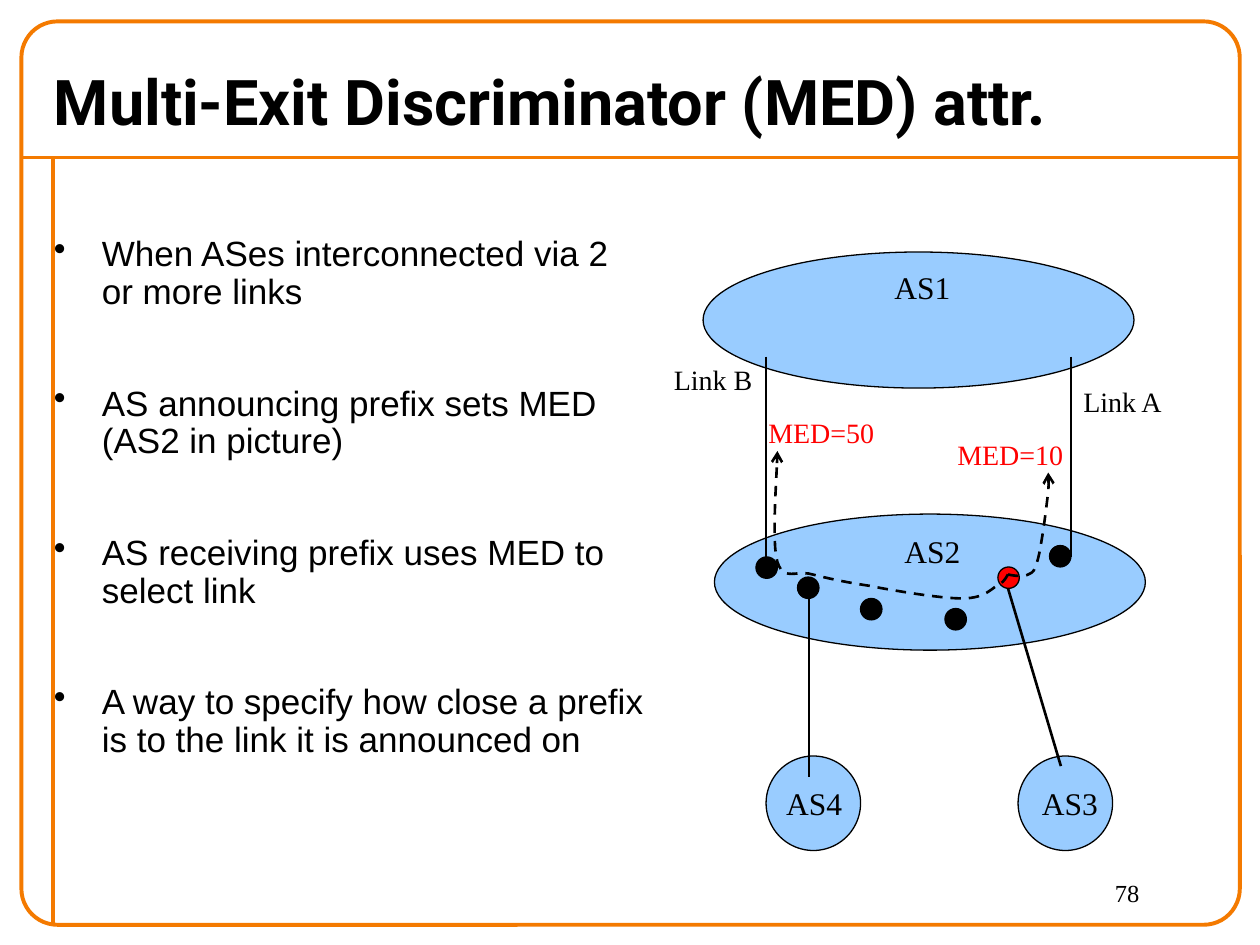
from lxml import etree
from pptx import Presentation
from pptx.dml.color import RGBColor
from pptx.enum.dml import MSO_LINE
from pptx.enum.shapes import MSO_CONNECTOR, MSO_SHAPE
from pptx.enum.text import MSO_ANCHOR
from pptx.oxml.ns import qn
from pptx.util import Inches, Pt

STRAIGHT = MSO_CONNECTOR.STRAIGHT
OVAL = MSO_SHAPE.OVAL
ROUNDED = MSO_SHAPE.ROUNDED_RECTANGLE
MIDDLE, TOP = MSO_ANCHOR.MIDDLE, MSO_ANCHOR.TOP
DASH = MSO_LINE.DASH

BLACK, RED, ORANGE, BLUE = "000000", "FF0000", "F47A00", "99CCFF"
SERIF = "Times New Roman"
DOT = 0.17
CURVE_STEPS = 12


def color(hex_code):
    return RGBColor.from_string(hex_code)


def bezier(start, first, second, end):
    """Points along a cubic curve, without its start."""
    points = []
    for step in range(1, CURVE_STEPS + 1):
        t = step / CURVE_STEPS
        u = 1 - t
        points.append(tuple(
            u**3 * a + 3 * u * u * t * b + 3 * u * t * t * c + t**3 * d
            for a, b, c, d in zip(start, first, second, end)))
    return points


class SlideBuilder:
    def __init__(self, slide):
        self.slide = slide
        self.shapes = slide.shapes

    def set_line(self, shape, hex_code, width):
        shape.line.color.rgb = color(hex_code)
        shape.line.width = Pt(width)

    def shape(self, kind, left, top, width, height, fill=None,
              line=BLACK, line_width=0.75):
        shape = self.shapes.add_shape(
            kind, Inches(left), Inches(top), Inches(width), Inches(height))
        shape.shadow.inherit = False
        if fill:
            shape.fill.solid()
            shape.fill.fore_color.rgb = color(fill)
        else:
            shape.fill.background()
        self.set_line(shape, line, line_width)
        return shape

    def connector(self, start, end, line=BLACK, width=1.5):
        connector = self.shapes.add_connector(
            STRAIGHT, *(Inches(value) for value in start + end))
        self.set_line(connector, line, width)
        etree.SubElement(connector._element.spPr, qn("a:effectLst"))

    def dashed_arrow(self, start, curves):
        points = [start]
        for curve in curves:
            points += bezier(points[-1], *curve)
        points = [(Inches(x), Inches(y)) for x, y in points]
        builder = self.shapes.build_freeform(*points[0])
        builder.add_line_segments(points[1:], close=False)
        shape = builder.convert_to_shape()
        shape.shadow.inherit = False
        shape.fill.background()
        self.set_line(shape, BLACK, 1.5)
        shape.line.dash_style = DASH
        etree.SubElement(shape.line._get_or_add_ln(), qn("a:tailEnd"), type="arrow")

    def text(self, text, left, top, width, height, size=16, font=SERIF,
             hex_code=BLACK, bold=False, wrap=False, anchor=TOP):
        box = self.shapes.add_textbox(
            Inches(left), Inches(top), Inches(width), Inches(height))
        frame = box.text_frame
        frame.word_wrap = wrap
        frame.vertical_anchor = anchor
        frame.text = text
        for paragraph in frame.paragraphs:
            style = paragraph.font
            style.name, style.size, style.bold = font, Pt(size), bold
            style.color.rgb = color(hex_code)
        return frame

    def bullets(self, items, *place, gap, **style):
        frame = self.text("\n".join(items), *place, wrap=True, **style)
        for paragraph in frame.paragraphs:
            paragraph.line_spacing = 0.9
            paragraph.space_after = Pt(gap)
            properties = paragraph._p.get_or_add_pPr()
            properties.set("marL", str(Inches(0.38)))
            properties.set("indent", str(-Inches(0.38)))
            bullet = etree.Element(qn("a:buChar"), char="•")
            properties.find(qn("a:defRPr")).addprevious(bullet)


def main():
    presentation = Presentation()
    presentation.slide_width, presentation.slide_height = Inches(10), Inches(7.5)
    slide = presentation.slides.add_slide(presentation.slide_layouts[6])
    builder = SlideBuilder(slide)

    # Frame
    builder.connector((0.17, 1.25), (9.83, 1.25), ORANGE, 2.25)
    builder.connector((0.42, 1.25), (0.42, 7.33), ORANGE, 2.25)
    frame = builder.shape(ROUNDED, 0.17, 0.17, 9.67, 7.17,
                          line=ORANGE, line_width=2.25)
    frame.adjustments[0] = 0.04

    # Page number, title and bullets
    builder.text("78", 8.75, 6.92, 1, 0.42, size=14, wrap=True)
    builder.text("Multi-Exit Discriminator (MED) attr.", 0.33, 0.42, 9.67, 0.75,
                 size=36, font="Roboto", bold=True, wrap=True, anchor=MIDDLE)
    builder.bullets([
        "When ASes interconnected via 2 or more links",
        "AS announcing prefix sets MED (AS2 in picture)",
        "AS receiving prefix uses MED to select link",
        "A way to specify how close a prefix is to the link it is announced on",
    ], 0.33, 1.83, 4.92, 4.67, gap=42, size=20, font="Arial")

    # Upper networks and the links between them
    for left, top in ((5.58, 2), (5.67, 4.08)):
        builder.shape(OVAL, left, top, 3.42, 1.08, BLUE)
    for x in (6.08, 8.5):
        builder.connector((x, 2.83), (x, 4.42))
    builder.text("Link B", 5.25, 2.83, 0.82, 0.37)
    builder.text("Link A", 8.5, 3, 0.84, 0.37)

    # Routers in AS2
    for left, top, fill in ((6, 4.42, BLACK), (6.33, 4.58, BLACK),
                            (7.5, 4.83, BLACK), (7.92, 4.5, RED),
                            (8.33, 4.33, BLACK), (6.83, 4.75, BLACK)):
        builder.shape(OVAL, left, top, DOT, DOT, fill)

    # Announcements with their MED values
    origin = (8, 4.56)
    builder.dashed_arrow(origin, [
        ((8.06, 4.57), (8.12, 4.58), (8.16, 4.56)),
        ((8.2, 4.54), (8.21, 4.54), (8.24, 4.43)),
        ((8.27, 4.31), (8.31, 4), (8.32, 3.89)),
        ((8.33, 3.77), (8.32, 3.77), (8.32, 3.75)),
    ])
    builder.text("MED=10", 7.5, 3.42, 1.04, 0.37, hex_code=RED)
    builder.dashed_arrow(origin, [
        ((7.98, 4.59), (7.97, 4.62), (7.91, 4.65)),
        ((7.85, 4.69), (7.8, 4.75), (7.63, 4.75)),
        ((7.47, 4.75), (7.1, 4.69), (6.9, 4.65)),
        ((6.7, 4.62), (6.57, 4.59), (6.45, 4.56)),
        ((6.32, 4.52), (6.22, 4.62), (6.17, 4.46)),
        ((6.12, 4.3), (6.17, 3.73), (6.17, 3.58)),
    ])
    builder.text("MED=50", 6, 3.25, 1.04, 0.37, hex_code=RED)

    # Lower networks, network names and their links
    for left in (8.08, 6.08):
        builder.shape(OVAL, left, 6, 0.75, 0.75, BLUE)
    for name, left, top in (("AS1", 7, 2.08), ("AS2", 7.08, 4.17),
                            ("AS4", 6.14, 6.17), ("AS3", 8.17, 6.17)):
        builder.text(name, left, top, 0.65, 0.4, size=18)
    builder.connector((6.42, 4.75), (6.42, 6.17))
    builder.connector((8, 4.67), (8.42, 6.08))

    presentation.save("out.pptx")


if __name__ == "__main__":
    main()
